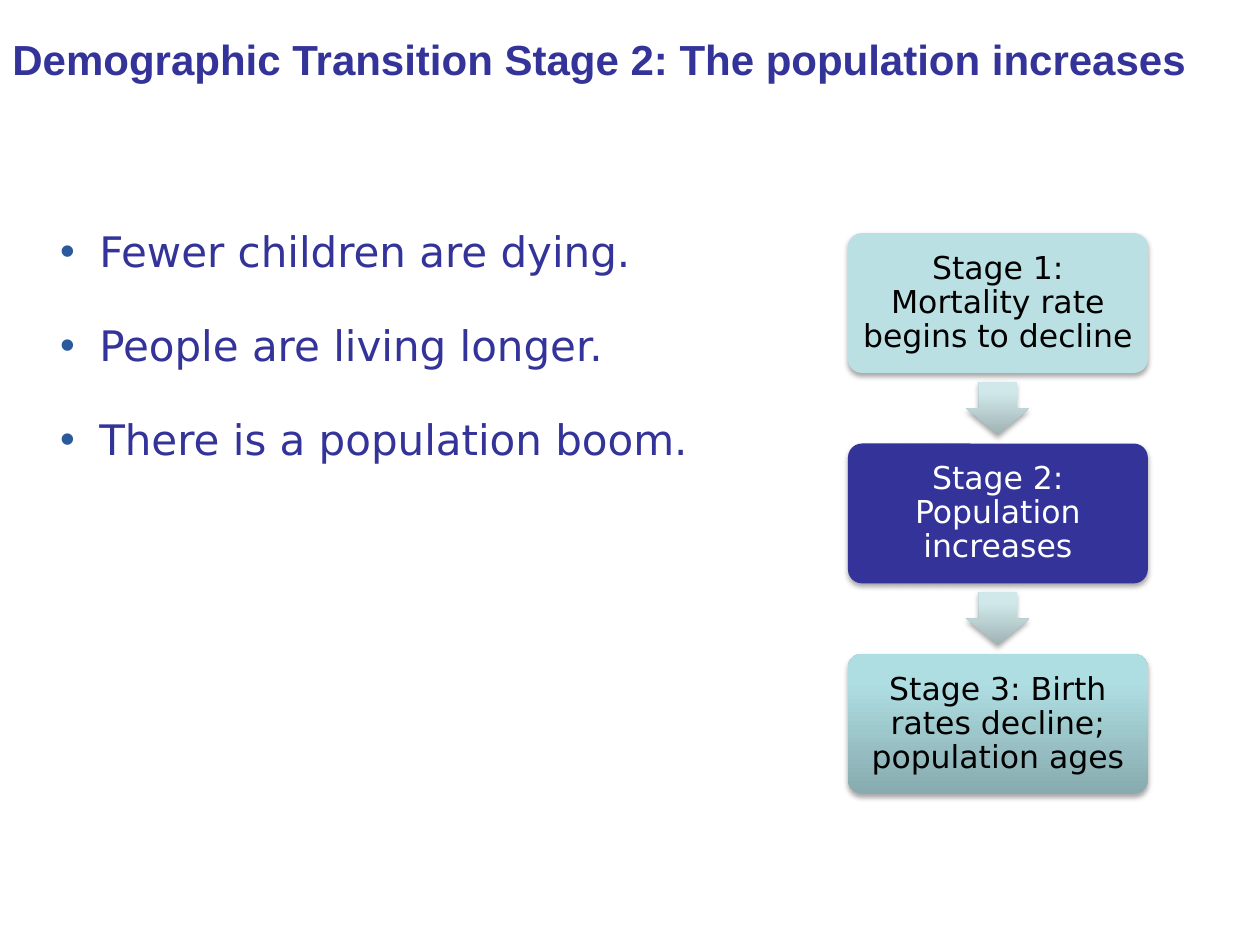
from copy import deepcopy
from dataclasses import dataclass

from lxml import etree
from pptx import Presentation
from pptx.dml.color import RGBColor
from pptx.enum import shapes, text
from pptx.oxml.ns import qn
from pptx.util import Inches, Pt


@dataclass(frozen=True)
class Theme:
    ink: str = "333399"
    dark: str = "000000"
    light: str = "FFFFFF"
    dot: str = "2B5A9C"
    pale: str = "BBE0E3"
    teal: tuple = ((0, "87ABAE"), (0.8, "AFDEE2"), (1, "AFE0E4"))
    mist: tuple = ((0, "A0B3B4"), (0.8, "D0E8EA"), (1, "D0EAEC"))
    head: str = "Arial"
    body: str = "DejaVu Sans"
    large: int = 24
    small: int = 18


class Deck:
    def __init__(self, theme):
        self.theme = theme
        self.prs = Presentation()
        self.prs.slide_width, self.prs.slide_height = Inches(10), Inches(7.5)
        self.slide = self.prs.slides.add_slide(self.prs.slide_layouts[6])

    def put(self, para, words, font, size, color, bold=False):
        """Add one styled run to a paragraph."""
        run = para.add_run()
        run.text = words
        run.font.name, run.font.size, run.font.bold = font, Pt(size), bold
        run.font.color.rgb = RGBColor.from_string(color)

    def frame(self, *box):
        """Add a wrapping text box and return its text frame."""
        body = self.slide.shapes.add_textbox(*map(Inches, box)).text_frame
        body.word_wrap = True
        return body

    def title(self, words, *box):
        body = self.frame(*box)
        body.vertical_anchor = text.MSO_ANCHOR.MIDDLE
        t = self.theme
        self.put(body.paragraphs[0], words, t.head, t.large, t.ink, True)

    def bullets(self, lines, *box):
        body, t = self.frame(*box), self.theme
        for i, line in enumerate(lines):
            para = body.add_paragraph() if i else body.paragraphs[0]
            if i:
                para.space_before = Pt(25)
            props = para._p.get_or_add_pPr()
            props.set("marL", str(Inches(0.31)))
            props.set("indent", str(Inches(-0.31)))
            color = etree.SubElement(props, qn("a:buClr"))
            etree.SubElement(color, qn("a:srgbClr"), val=t.dot)
            etree.SubElement(props, qn("a:buFont"), typeface=t.head)
            etree.SubElement(props, qn("a:buChar"), char="•")
            self.put(para, line, t.body, t.large, t.ink)

    def paint(self, shape, fill):
        """Fill with one colour, or with stops running from bottom to top."""
        if isinstance(fill, str):
            shape.fill.solid()
            shape.fill.fore_color.rgb = RGBColor.from_string(fill)
            return
        shape.fill.gradient()
        shape.fill.gradient_angle = 90
        stops = shape._element.spPr.find(".//" + qn("a:gsLst"))
        while len(stops) < len(fill):
            stops.append(deepcopy(stops[-1]))
        for stop, (place, color) in zip(shape.fill.gradient_stops, fill):
            stop.position = place
            stop.color.rgb = RGBColor.from_string(color)

    def shade(self, shape):
        """Give a shape a soft shadow just below it."""
        shape.shadow.inherit = False
        effects = shape._element.spPr.find(qn("a:effectLst"))
        outer = etree.SubElement(
            effects, qn("a:outerShdw"), blurRad=str(Pt(3.1)),
            dist=str(Pt(1.8)), dir="5400000", rotWithShape="0")
        color = etree.SubElement(outer, qn("a:srgbClr"), val=self.theme.dark)
        etree.SubElement(color, qn("a:alpha"), val="35000")

    def shape(self, kind, fill, adjust, *box):
        shape = self.slide.shapes.add_shape(kind, *map(Inches, box))
        for i, value in enumerate(adjust):
            shape.adjustments[i] = value
        self.paint(shape, fill)
        shape.line.fill.background()
        self.shade(shape)
        return shape

    def stage(self, words, fill, color, *box):
        kind = shapes.MSO_SHAPE.ROUNDED_RECTANGLE
        body = self.shape(kind, fill, [0.1], *box).text_frame
        body.word_wrap = True
        body.vertical_anchor = text.MSO_ANCHOR.MIDDLE
        body.margin_left = body.margin_right = Inches(0.07)
        body.margin_top = body.margin_bottom = Inches(0.07)
        para = body.paragraphs[0]
        para.alignment = text.PP_ALIGN.CENTER
        para.line_spacing = 0.9
        self.put(para, words, self.theme.body, self.theme.small, color)

    def arrow(self, *box):
        kind = shapes.MSO_SHAPE.DOWN_ARROW
        self.shape(kind, self.theme.mist, [0.6, 0.5], *box)


def main():
    theme = Theme()
    deck = Deck(theme)
    deck.title("Demographic Transition Stage 2: The population increases",
               0, 0, 9.6, 0.94)
    deck.bullets(["Fewer children are dying.", "People are living longer.",
                  "There is a population boom."], 0.38, 1.74, 9.23, 4.66)
    stages = [
        ("Stage 1: Mortality rate begins to decline", theme.pale, theme.dark),
        ("Stage 2: Population increases", theme.ink, theme.light),
        ("Stage 3: Birth rates decline; population ages", theme.teal,
         theme.dark),
    ]
    left, top, wide, high, gap = 6.73, 1.85, 2.38, 1.11, 0.56
    across, down = 0.5, 0.42
    for i, (words, fill, color) in enumerate(stages):
        y = top + i * (high + gap)
        if i:
            deck.arrow(left + (wide - across) / 2, y - (gap + down) / 2,
                       across, down)
        deck.stage(words, fill, color, left, y, wide, high)
    deck.prs.save("out.pptx")


if __name__ == "__main__":
    main()
